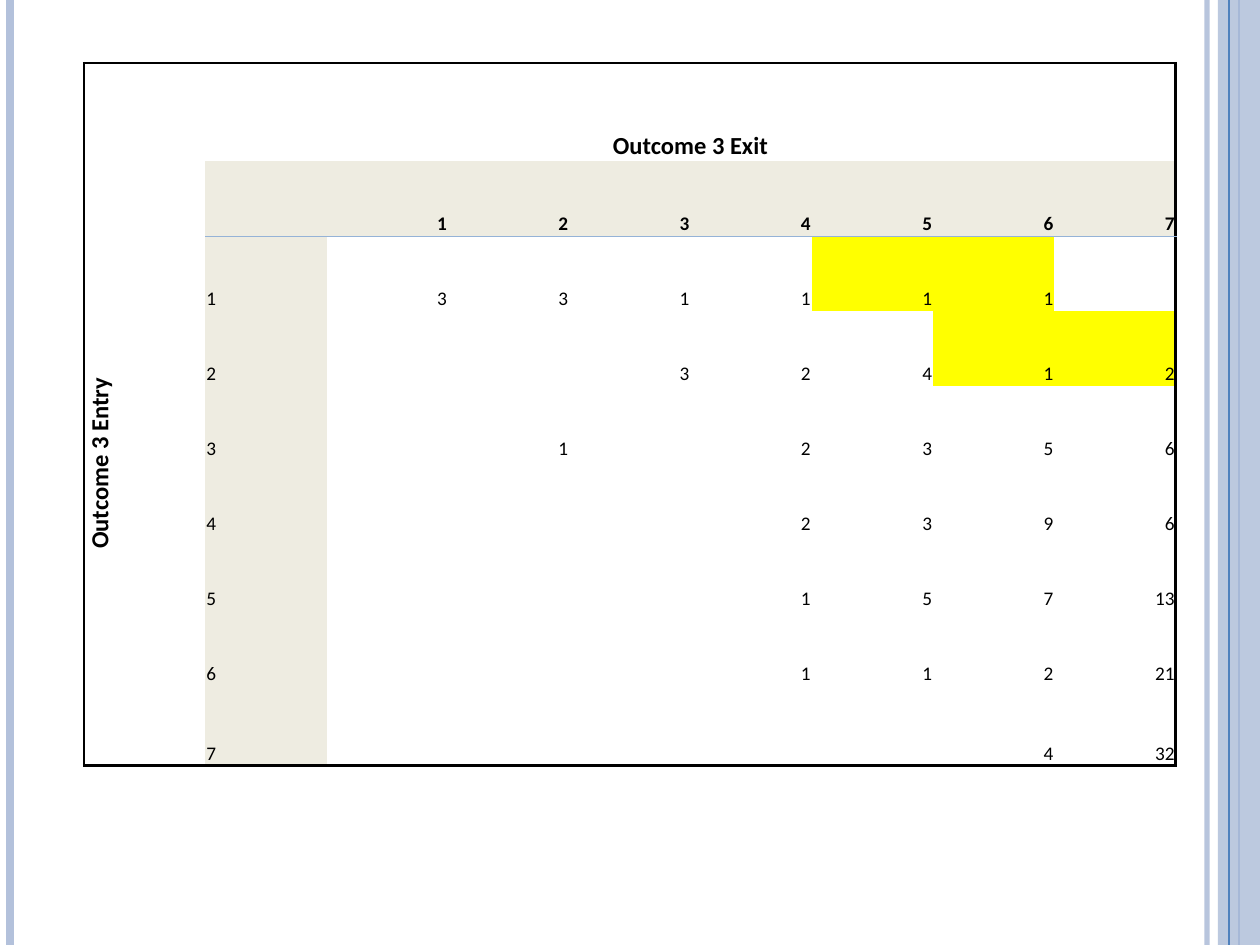
from lxml.etree import SubElement
from pptx import Presentation
from pptx.dml.color import RGBColor
from pptx.enum.shapes import MSO_CONNECTOR, MSO_SHAPE
from pptx.enum.text import MSO_ANCHOR as Anchor, PP_ALIGN as Align
from pptx.oxml.ns import qn
from pptx.util import Pt

PX = 914400 // 126
SLIDE_W, SLIDE_H = 1260, 945
BLACK, RULE, PALE, DEEP = "000000", "95B3D7", "B3C1DB", "4F81BD"
HEADER_FILL, HIGHLIGHT = "EEECE1", "FFFF00"

EXIT_TITLE = "Outcome 3 Exit"
ENTRY_TITLE = "Outcome 3 Entry"
RATINGS = ["1", "2", "3", "4", "5", "6", "7"]
COUNTS = [
    ["3", "3", "1", "1", "1", "1", ""],
    ["", "", "3", "2", "4", "1", "2"],
    ["", "1", "", "2", "3", "5", "6"],
    ["", "", "", "2", "3", "9", "6"],
    ["", "", "", "1", "5", "7", "13"],
    ["", "", "", "1", "1", "2", "21"],
    ["", "", "", "", "", "4", "32"],
]
HIGHLIGHTED = {(2, 6), (2, 7), (3, 7), (3, 8)}

BACK_STRIPES = [(1207, PALE, 3, 93), (10, PALE, 4.5, 100), (1239, DEEP, 1.5, 100)]
FRONT_STRIPE = (1229, DEEP, 0.75, 100)
BAND_X = 1218

TABLE_X, TABLE_Y, TABLE_W = 84, 63, 1092
ROW_HEIGHTS = [98] + [75] * 7 + [80]
LAST = 8


def rgb(code):
    return RGBColor.from_string(code)


def set_alpha(fill_parent, percent):
    color = fill_parent.find(".//" + qn("a:srgbClr"))
    SubElement(color, qn("a:alpha"), val=str(percent * 1000))


def add_stripe(slide, x, color, width, alpha):
    stripe = slide.shapes.add_connector(
        MSO_CONNECTOR.STRAIGHT, x * PX, 0, x * PX, SLIDE_H * PX)
    stripe.line.color.rgb = rgb(color)
    stripe.line.width = Pt(width)
    properties = stripe._element.spPr
    if alpha < 100:
        set_alpha(properties, alpha)
    SubElement(properties, qn("a:effectLst"))


def add_band(slide):
    band = slide.shapes.add_shape(
        MSO_SHAPE.RECTANGLE, BAND_X * PX, 0, (SLIDE_W - BAND_X) * PX, SLIDE_H * PX)
    band.shadow.inherit = False
    band.fill.solid()
    band.fill.fore_color.rgb = rgb(PALE)
    set_alpha(band._element.spPr, 87)
    band.line.fill.background()


def set_borders(cell, row, col):
    bottom, right = row, col
    if cell.is_merge_origin:
        bottom += cell.span_height - 1
        right += cell.span_width - 1
    frame, rule = (BLACK, 1.5), (RULE, 0.5)
    borders = {
        "a:lnL": frame if col == 0 else None,
        "a:lnR": frame if right == LAST else None,
        "a:lnT": frame if row == 0 else rule if row == 2 and col else None,
        "a:lnB": frame if bottom == LAST else rule if row == 1 and col else None,
    }
    for tag, border in borders.items():
        line = SubElement(cell._tc.get_or_add_tcPr(), qn(tag))
        if border:
            color, width = border
            line.set("w", str(Pt(width)))
            SubElement(SubElement(line, qn("a:solidFill")), qn("a:srgbClr"), val=color)
        else:
            SubElement(line, qn("a:noFill"))


def set_fill(cell, row, col):
    if (row, col) in HIGHLIGHTED:
        color = HIGHLIGHT
    elif (row == 1 and col > 0) or (col == 1 and row > 0):
        color = HEADER_FILL
    else:
        cell.fill.background()
        return
    cell.fill.solid()
    cell.fill.fore_color.rgb = rgb(color)


def write(cell, text, align, size=11, bold=False, anchor=Anchor.BOTTOM):
    cell.vertical_anchor = anchor
    cell.margin_left = cell.margin_right = cell.margin_top = PX
    cell.margin_bottom = 0
    paragraph = cell.text_frame.paragraphs[0]
    paragraph.alignment = align
    run = paragraph.add_run()
    run.text = text
    run.font.name = "Calibri"
    run.font.size = Pt(size)
    run.font.bold = bold
    run.font.color.rgb = rgb(BLACK)


def add_crosstab(slide):
    table = slide.shapes.add_table(
        LAST + 1, LAST + 1, TABLE_X * PX, TABLE_Y * PX,
        TABLE_W * PX, sum(ROW_HEIGHTS) * PX).table
    table.first_row = table.horz_banding = False
    for column in table.columns:
        column.width = TABLE_W * PX // (LAST + 1)
    for row, height in zip(table.rows, ROW_HEIGHTS):
        row.height = height * PX

    exit_cell, entry_cell = table.cell(0, 1), table.cell(1, 0)
    exit_cell.merge(table.cell(0, LAST))
    entry_cell.merge(table.cell(LAST, 0))
    for row in range(LAST + 1):
        for col in range(LAST + 1):
            cell = table.cell(row, col)
            set_borders(cell, row, col)
            set_fill(cell, row, col)

    write(exit_cell, EXIT_TITLE, Align.CENTER, 14, True)
    write(entry_cell, ENTRY_TITLE, Align.CENTER, 14, True, Anchor.MIDDLE)
    entry_cell._tc.tcPr.set("vert", "vert270")
    for col, rating in enumerate(RATINGS, 2):
        write(table.cell(1, col), rating, Align.RIGHT, bold=True)
    for row, (rating, counts) in enumerate(zip(RATINGS, COUNTS), 2):
        write(table.cell(row, 1), rating, Align.LEFT)
        for col, count in enumerate(counts, 2):
            if count:
                write(table.cell(row, col), count, Align.RIGHT)


def main():
    deck = Presentation()
    deck.slide_width, deck.slide_height = SLIDE_W * PX, SLIDE_H * PX
    slide = deck.slides.add_slide(deck.slide_layouts[6])
    for stripe in BACK_STRIPES:
        add_stripe(slide, *stripe)
    add_band(slide)
    add_stripe(slide, *FRONT_STRIPE)
    add_crosstab(slide)
    deck.save("out.pptx")


if __name__ == "__main__":
    main()
